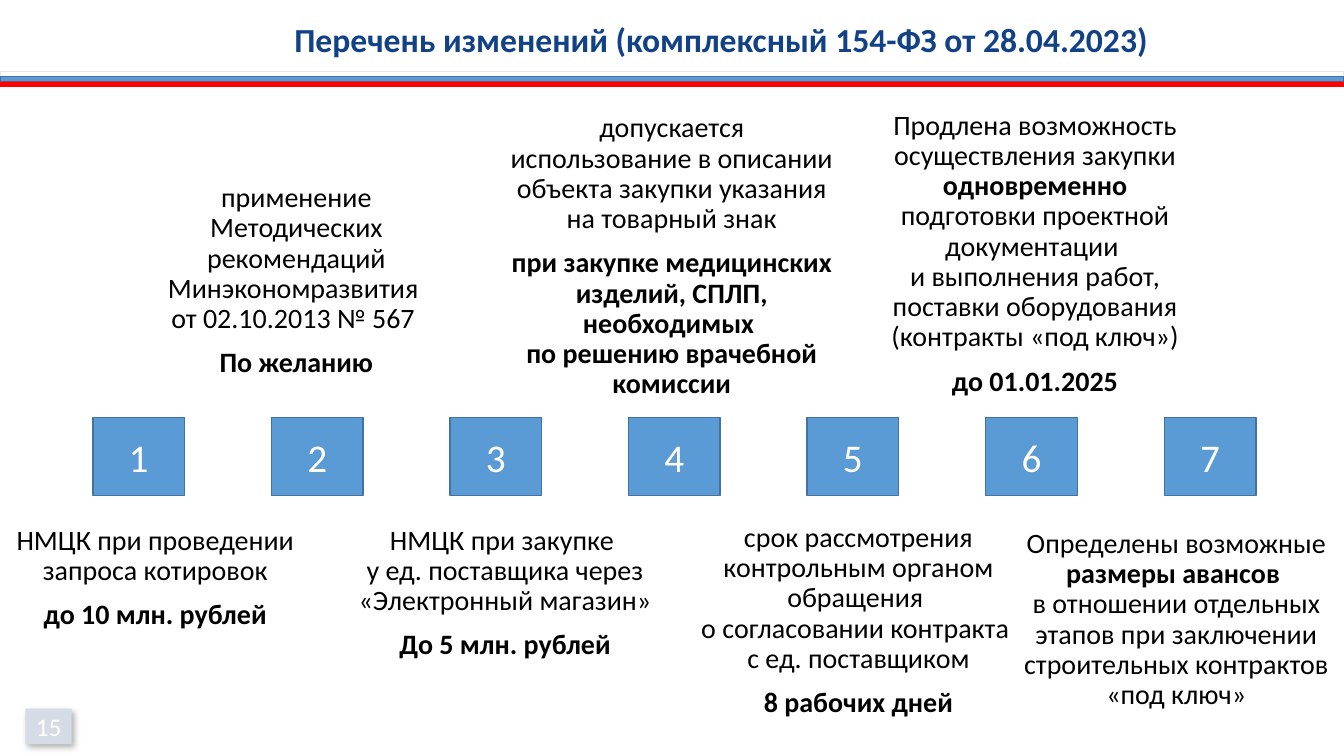
from dataclasses import dataclass

import lxml.etree
import pptx
import pptx.dml.color
import pptx.enum.shapes
import pptx.enum.text
import pptx.oxml.ns
import pptx.util

Cm, Pt = pptx.util.Cm, pptx.util.Pt
SHAPE = pptx.enum.shapes.MSO_SHAPE


@dataclass(frozen=True)
class Theme:
    """Colours, font and type sizes of the slide."""
    font: str = "Calibri"
    white: str = "FFFFFF"
    black: str = "000000"
    blue: str = "5B9BD5"
    blue_edge: str = "43739E"
    grey_edge: str = "E7E6E6"
    red: str = "FF0000"
    badge: str = "D6DCE5"
    title: str = "114187"
    title_size: int = 24
    number_size: int = 28
    body_size: int = 20
    badge_size: int = 18


THEME = Theme()

NOTES = [
    ((-0.38, 13.13, 8.59, 3.2), [
        [("НМЦК при проведении запроса котировок", False)],
        [("до 10 млн. рублей", True)]]),
    ((3.48, 4.5, 7.98, 5.23), [
        [("применение Методических рекомендаций Минэкономразвития \n"
          "от 02.10.2013 № 567 ", False)],
        [("По желанию", True)]]),
    ((8.74, 13.13, 7.98, 4.32), [
        [("НМЦК при закупке \nу ед. поставщика через «Электронный магазин» ", False)],
        [("До 5 млн. рублей", True)]]),
    ((12.55, 2.74, 8.76, 4.32), [
        [("допускается использование в описании объекта закупки указания "
          "на товарный знак", False)],
        [("при закупке медицинских изделий, СПЛП, необходимых \n"
          "по решению врачебной комиссии", True)]]),
    ((17.42, 13.06, 8.43, 5.23), [
        [("срок рассмотрения контрольным органом обращения \n"
          "о согласовании контракта \nс ед. поставщиком", False)],
        [("8 рабочих дней", True)]]),
    ((21.87, 2.67, 8.43, 5.23), [
        [("Продлена возможность осуществления закупки ", False),
         ("одновременно ", True),
         ("подготовки проектной документации \nи выполнения работ, "
          "поставки оборудования (контракты «под ключ»)", False)],
        [("до 01.01.2025", True)]]),
    ((25.43, 13.21, 8.43, 5.23), [
        [("Определены возможные ", False),
         ("размеры авансов \n", True),
         ("в отношении отдельных этапов при заключении строительных "
          "контрактов «под ключ»", False)]]),
]


def rgb(value):
    """Return the colour for a hex string."""
    return pptx.dml.color.RGBColor.from_string(value)


def style_run(r, size, color, bold=False):
    """Apply font, size, colour and weight to a run."""
    r.font.name = THEME.font
    r.font.size = Pt(size)
    r.font.bold = bold
    r.font.color.rgb = rgb(color)


def add_box(slide, kind, box, fill, edge=None):
    """Add a filled shape with an optional thin outline."""
    sp = slide.shapes.add_shape(kind, *map(Cm, box))
    sp.shadow.inherit = False
    sp.fill.solid()
    sp.fill.fore_color.rgb = rgb(fill)
    if edge:
        sp.line.color.rgb = rgb(edge)
        sp.line.width = Pt(1)
    else:
        sp.line.fill.background()
    return sp


def set_label(sp, text, size, color, bold=False):
    """Write one centred line into a shape."""
    tf = sp.text_frame
    tf.word_wrap = True
    tf.text = text
    p = tf.paragraphs[0]
    p.alignment = pptx.enum.text.PP_ALIGN.CENTER
    style_run(p.runs[0], size, color, bold)


def add_bands(slide):
    """Draw the three stripes under the title."""
    bands = [(THEME.white, THEME.grey_edge), (THEME.blue, THEME.blue_edge), (THEME.red, None)]
    for i, (fill, edge) in enumerate(bands):
        add_box(slide, SHAPE.RECTANGLE, (0, 1.8 + 0.13 * i, 33.87, 0.13), fill, edge)


def add_title(slide, text):
    """Add the slide heading."""
    sp = slide.shapes.add_textbox(Cm(5.54), Cm(0.36), Cm(25.27), Cm(1.27))
    set_label(sp, text, THEME.title_size, THEME.title, True)


def add_step(slide, number):
    """Add one numbered box of the evenly spaced row."""
    box = (2.34 + 4.5 * (number - 1), 10.52, 2.31, 1.96)
    sp = add_box(slide, SHAPE.FLOWCHART_PROCESS, box, THEME.blue, THEME.blue_edge)
    sp.text_frame.vertical_anchor = pptx.enum.text.MSO_ANCHOR.MIDDLE
    set_label(sp, str(number), THEME.number_size, THEME.white)


def add_note(slide, box, paragraphs):
    """Add a centred note made of regular and bold pieces."""
    tf = slide.shapes.add_textbox(*map(Cm, box)).text_frame
    tf.word_wrap = True
    for i, pieces in enumerate(paragraphs):
        p = tf.add_paragraph() if i else tf.paragraphs[0]
        p.alignment = pptx.enum.text.PP_ALIGN.CENTER
        p.line_spacing = 0.9
        p.space_before = Pt(10)
        for text, bold in pieces:
            for j, line in enumerate(text.split("\n")):
                if j:
                    p.add_line_break()
                if line:
                    r = p.add_run()
                    r.text = line
                    style_run(r, THEME.body_size, THEME.black, bold)


def add_shadow(sp):
    """Give a shape a soft shadow to the lower right."""
    qn = pptx.oxml.ns.qn
    effects = sp.element.spPr.find(qn("a:effectLst"))
    shadow = lxml.etree.SubElement(
        effects, qn("a:outerShdw"), blurRad=str(Pt(4.5)), dist=str(Pt(2.6)),
        dir=str(53 * 60000), algn="tl", rotWithShape="0")
    color = lxml.etree.SubElement(shadow, qn("a:srgbClr"), val=THEME.black)
    lxml.etree.SubElement(color, qn("a:alpha"), val="30000")


def add_page_badge(slide, text):
    """Add the page number in its shadowed box."""
    sp = add_box(slide, SHAPE.RECTANGLE, (0.64, 17.86, 1.17, 0.89), THEME.badge)
    add_shadow(sp)
    sp.text_frame.vertical_anchor = pptx.enum.text.MSO_ANCHOR.MIDDLE
    set_label(sp, text, THEME.badge_size, THEME.white)


def main():
    """Build and save the slide."""
    prs = pptx.Presentation()
    prs.slide_width, prs.slide_height = Cm(33.87), Cm(19.05)
    s = prs.slides.add_slide(prs.slide_layouts[6])
    add_bands(s)
    add_title(s, "Перечень изменений (комплексный 154-ФЗ от 28.04.2023)")
    add_page_badge(s, "15")
    for number, (box, paragraphs) in enumerate(NOTES, 1):
        add_step(s, number)
        add_note(s, box, paragraphs)
    prs.save("out.pptx")


if __name__ == "__main__":
    main()
